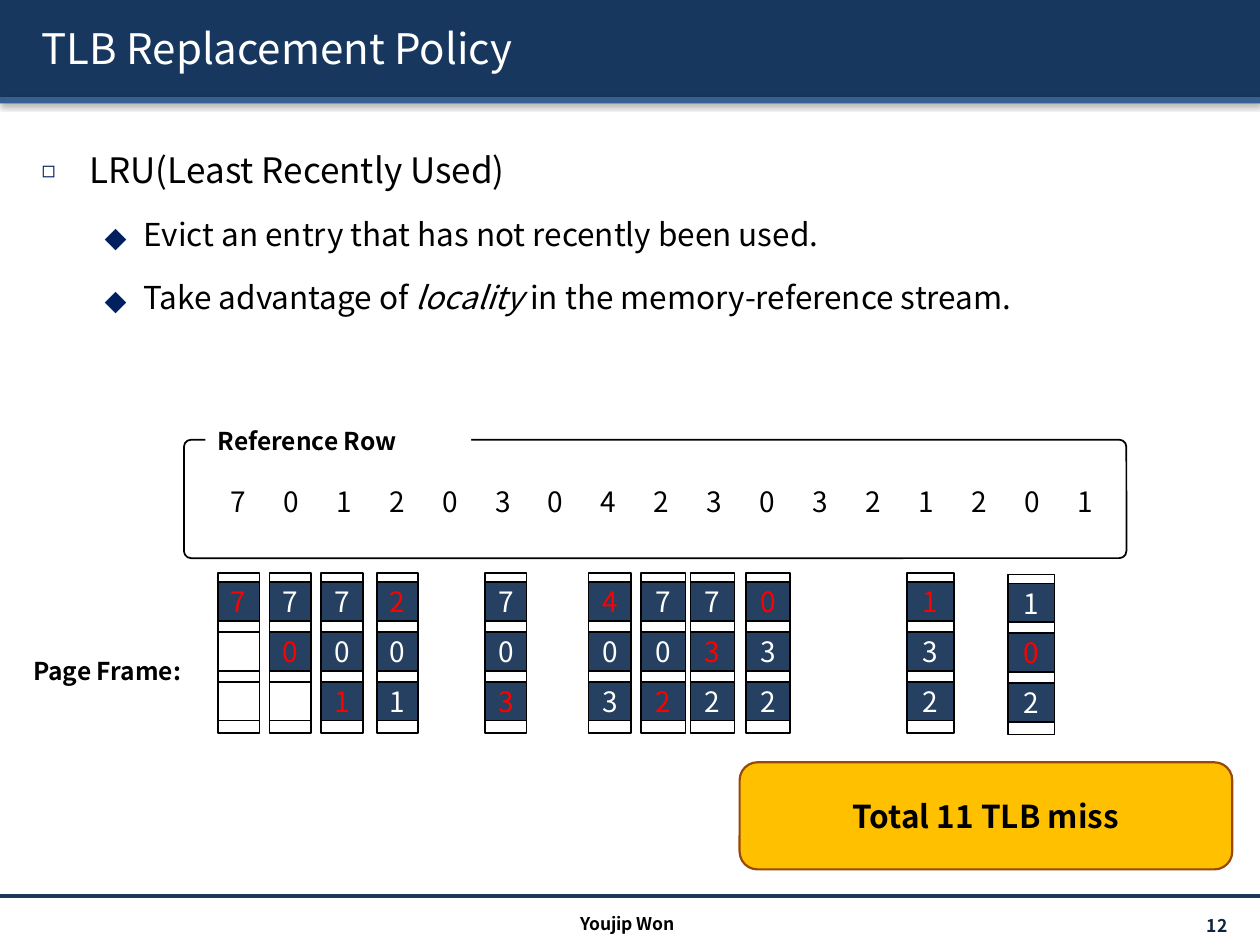
"""Build the slide on the LRU policy for TLB replacement."""
from dataclasses import dataclass

from lxml.etree import SubElement
from pptx import Presentation
from pptx.dml.color import RGBColor
from pptx.enum.shapes import MSO_CONNECTOR, MSO_SHAPE
from pptx.enum.text import MSO_ANCHOR, MSO_AUTO_SIZE, PP_ALIGN
from pptx.oxml import parse_xml
from pptx.oxml.ns import nsdecls, qn
from pptx.util import Inches, Pt


@dataclass(frozen=True)
class Theme:
    font: str = "Noto Sans CJK KR"
    navy: str = "17375E"
    blue: str = "376092"
    cell: str = "254061"
    mark: str = "002060"
    number: str = "0F243E"
    gold: str = "FFC000"
    brown: str = "984807"
    red: str = "FF0000"
    white: str = "FFFFFF"
    black: str = "000000"
    title: int = 24
    head: int = 20
    body: int = 18
    digit: int = 16
    label: int = 14
    foot: int = 10


theme = Theme()
deck = Presentation()
deck.slide_width, deck.slide_height = Inches(10), Inches(7.5)
slide = deck.slides.add_slide(deck.slide_layouts[1])
shapes = slide.shapes


def draw_box(kind, left, top, width, height, fill=None, line=None, weight=1):
    """Add a shape, filled and outlined only where colours are given."""
    box = shapes.add_shape(kind, Inches(left), Inches(top), Inches(width), Inches(height))
    box.shadow.inherit = False
    if fill:
        box.fill.solid()
        box.fill.fore_color.rgb = RGBColor.from_string(fill)
    else:
        box.fill.background()
    if line:
        box.line.color.rgb = RGBColor.from_string(line)
        box.line.width = Pt(weight)
    else:
        box.line.fill.background()
    return box


def write(box, text, size, color, align=PP_ALIGN.CENTER, bold=False,
          anchor=MSO_ANCHOR.MIDDLE, side=0.1):
    """Put one formatted line of text into a shape."""
    frame = box.text_frame
    frame.word_wrap = True
    frame.auto_size = MSO_AUTO_SIZE.NONE
    frame.vertical_anchor = anchor
    frame.margin_left = frame.margin_right = Inches(side)
    frame.margin_top = frame.margin_bottom = Inches(0.05)
    line = frame.paragraphs[0]
    line.text = text
    line.alignment = align
    line.font.name, line.font.size, line.font.bold = theme.font, Pt(size), bold
    line.font.color.rgb = RGBColor.from_string(color)


shadow = (
    f'<a:effectLst {nsdecls("a")}><a:outerShdw blurRad="{{blur}}" dist="{{dist}}" dir="{{turn}}">'
    '<a:srgbClr val="000000"><a:alpha val="{alpha}"/></a:srgbClr></a:outerShdw></a:effectLst>'
)

for top, height, fill in ((0, 0.77, theme.navy), (0.77, 0.05, theme.blue)):
    bar = draw_box(MSO_SHAPE.RECTANGLE, 0, top, 10, height, fill)
    props = bar._element.spPr
    props.remove(props.find(qn("a:effectLst")))
    props.append(parse_xml(shadow.format(blur=39370, dist=20320, turn=5400000, alpha=38000)))

rule = shapes.add_connector(
    MSO_CONNECTOR.STRAIGHT, Inches(0), Inches(7.11), Inches(10), Inches(7.11))
rule.line.color.rgb = RGBColor.from_string(theme.navy)
rule.line.width = Pt(2)
SubElement(rule._element.spPr, qn("a:effectLst"))

title, body = shapes.title, slide.placeholders[1]
for holder, top, height in ((body, 0.96, 6.02), (title, 0.06, 0.64)):
    holder.left, holder.top = Inches(0.23), Inches(top)
    holder.width, holder.height = Inches(9.61), Inches(height)
    shapes._spTree.append(holder._element)

write(title, "TLB Replacement Policy", theme.title, theme.white, PP_ALIGN.LEFT)
run = title.text_frame.paragraphs[0].runs[0]
run._r.get_or_add_rPr().append(
    parse_xml(shadow.format(blur=38100, dist=38100, turn=2700000, alpha=100000)))

points = (
    (0, ("LRU(Least Recently Used)",)),
    (1, ("Evict an entry that has not recently been used.",)),
    (1, ("Take advantage of ", "locality", " in the memory-reference stream.")),
)
levels = (
    (0.38, -0.38, "◻", 65000, theme.head),
    (0.81, -0.31, "⬥", 100000, theme.body),
)
frame = body.text_frame
frame.word_wrap = True
frame.auto_size = MSO_AUTO_SIZE.NONE
for index, (level, parts) in enumerate(points):
    indent, hang, mark, scale, size = levels[level]
    line = frame.add_paragraph() if index else frame.paragraphs[0]
    line.level = level
    props = line._p.get_or_add_pPr()
    props.set("marL", str(Inches(indent)))
    props.set("indent", str(Inches(hang)))
    SubElement(SubElement(props, qn("a:buClr")), qn("a:srgbClr"), val=theme.mark)
    SubElement(props, qn("a:buSzPct"), val=str(scale))
    SubElement(props, qn("a:buFont"), typeface=theme.font)
    SubElement(props, qn("a:buChar"), char=mark)
    line.line_spacing = 1.5
    line.space_before = Pt(size * 0.2 if index else 0)
    line.font.name, line.font.size = theme.font, Pt(size)
    line.font.color.rgb = RGBColor.from_string(theme.black)
    for part in parts:
        run = line.add_run()
        run.text = part
        if part == "locality":
            run.font.italic = True

frame_box = draw_box(
    MSO_SHAPE.ROUNDED_RECTANGLE, 1.46, 3.49, 7.48, 0.94, theme.white, theme.black)
frame_box.adjustments[0] = 0.06

labels = (
    ("Reference Row", 1.63, 3.33, 2.11, 0.34, theme.white, theme.label, theme.black, PP_ALIGN.LEFT),
    ("Page Frame:", 0.04, 5.16, 1.62, 0.34, None, theme.label, theme.black, PP_ALIGN.CENTER),
    ("12", 8.71, 7.21, 1.13, 0.24, None, theme.foot, theme.number, PP_ALIGN.RIGHT),
    ("Youjip Won", 3.32, 7.2, 3.32, 0.24, None, theme.foot, theme.black, PP_ALIGN.CENTER),
)
for text, left, top, width, height, fill, size, color, align in labels:
    if fill:
        box = draw_box(MSO_SHAPE.RECTANGLE, left, top, width, height, fill)
    else:
        box = shapes.add_textbox(Inches(left), Inches(top), Inches(width), Inches(height))
    write(box, text, size, color, align, True, MSO_ANCHOR.TOP)

columns = (
    (1.73, 0.33, "7", 0), (2.14, 0.33, "70", 1), (2.55, 0.33, "701", 2),
    (2.99, 0.33, "201", 0), (3.85, 0.33, "703", 2), (4.67, 0.34, "403", 0),
    (5.09, 0.35, "702", 2), (5.48, 0.35, "732", 1), (5.92, 0.35, "032", 0),
    (7.2, 0.37, "132", 0), (8, 0.37, "102", 1),
)
for left, width, pages, fresh in columns:
    top = 4.56 if left == 8 else 4.55
    draw_box(MSO_SHAPE.RECTANGLE, left, top, width, 1.27, theme.white, theme.black)
    for row, page in enumerate(pages.ljust(3)):
        used = row < len(pages)
        slot = draw_box(MSO_SHAPE.RECTANGLE, left, top + 0.07 + row * 0.395, width, 0.31,
                        theme.cell if used else theme.white, theme.black)
        if used:
            color = theme.red if row == fresh else theme.white
            write(slot, page, theme.digit, color, side=0)

total = draw_box(MSO_SHAPE.ROUNDED_RECTANGLE, 5.87, 6.05, 3.91, 0.85,
                 theme.gold, theme.brown, 1.25)
write(total, "Total 11 TLB miss", theme.body, theme.black, bold=True, side=0.12)

for index, page in enumerate("70120304230321201"):
    box = shapes.add_textbox(
        Inches(1.65 + index * 0.42), Inches(3.79), Inches(0.48), Inches(0.37))
    write(box, page, theme.digit, theme.black, side=0)

deck.save("out.pptx")
